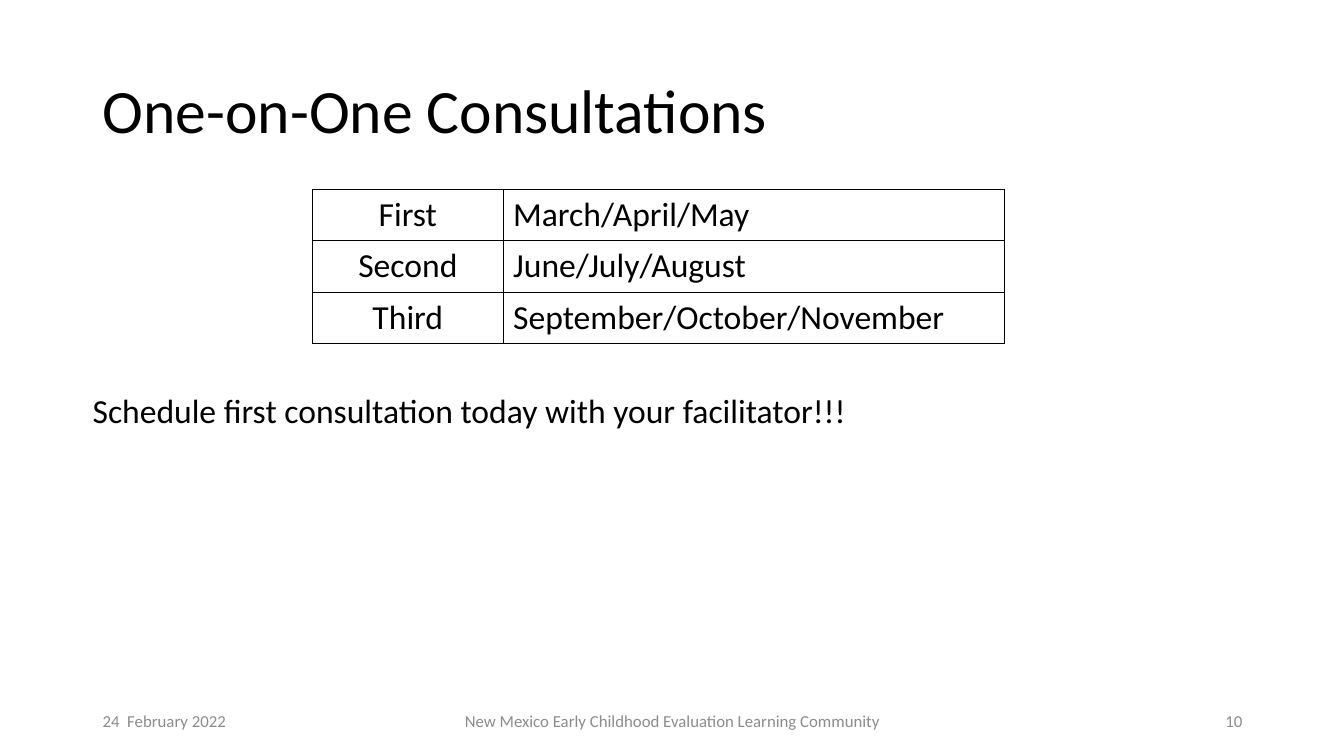
from pptx import Presentation
from pptx.dml.color import RGBColor
from pptx.enum.text import MSO_ANCHOR as Anchor, MSO_AUTO_SIZE as AutoSize, PP_ALIGN as Align
from pptx.oxml import parse_xml
from pptx.oxml.ns import nsdecls
from pptx.util import Inches, Pt

FONT = "Calibri"
BLACK = "000000"
GRAY = "8C8C8C"
CONSULTATIONS = [
    ("First", "March/April/May"),
    ("Second", "June/July/August"),
    ("Third", "September/October/November"),
]


def color(hex_code):
    return RGBColor.from_string(hex_code)


def write(frame, text, size, hex_code=BLACK, align=Align.LEFT):
    para = frame.paragraphs[0]
    para.alignment = align
    span = para.add_run()
    span.text = text
    span.font.name = FONT
    span.font.size = Pt(size)
    span.font.color.rgb = color(hex_code)
    return para


def add_title(page, text, left, top, width, height):
    title = page.shapes.title
    title.left, title.top = Inches(left), Inches(top)
    title.width, title.height = Inches(width), Inches(height)
    title.text_frame.vertical_anchor = Anchor.MIDDLE
    write(title.text_frame, text, 44).line_spacing = 0.9


def add_text(page, text, left, top, width, height, size, hex_code=BLACK,
             align=Align.LEFT, anchor=Anchor.TOP):
    box = page.shapes.add_textbox(Inches(left), Inches(top), Inches(width), Inches(height))
    frame = box.text_frame
    frame.word_wrap = True
    frame.vertical_anchor = anchor
    write(frame, text, size, hex_code, align)
    return frame


def add_borders(cell):
    properties = cell._tc.get_or_add_tcPr()
    for position, side in enumerate(("lnL", "lnR", "lnT", "lnB")):
        properties.insert(position, parse_xml(
            f'<a:{side} {nsdecls("a")} w="{Pt(1)}"><a:solidFill>'
            f'<a:srgbClr val="{BLACK}"/></a:solidFill></a:{side}>'))


def add_schedule(page, left, top, column_widths, row_height):
    table = page.shapes.add_table(
        len(CONSULTATIONS), len(column_widths), Inches(left), Inches(top),
        Inches(sum(column_widths)), Inches(row_height * len(CONSULTATIONS))).table
    table.first_row = False
    table.horz_banding = False
    for column, width in zip(table.columns, column_widths):
        column.width = Inches(width)
    for row, texts in zip(table.rows, CONSULTATIONS):
        row.height = Inches(row_height)
        for cell, text, align in zip(row.cells, texts, (Align.CENTER, Align.LEFT)):
            cell.fill.background()
            add_borders(cell)
            write(cell.text_frame, text, 24, align=align)


def add_footer(page, left, top, width, height):
    """Place date, community name and page number at left, centre and right."""
    side, middle = 3, 4.5
    parts = [
        ("24  February 2022", left, side, Align.LEFT),
        ("New Mexico Early Childhood Evaluation Learning Community",
         left + (width - middle) / 2, middle, Align.CENTER),
        ("10", left + width - side, side, Align.RIGHT),
    ]
    for text, part_left, part_width, align in parts:
        add_text(page, text, part_left, top, part_width, height, 12, GRAY,
                 align, Anchor.MIDDLE)


def main():
    deck = Presentation()
    deck.slide_width, deck.slide_height = Inches(13.33), Inches(7.5)
    page = deck.slides.add_slide(deck.slide_layouts.get_by_name("Title Only"))
    add_title(page, "One-on-One Consultations", 0.92, 0.4, 11.5, 1.45)
    add_footer(page, 0.92, 6.95, 11.5, 0.4)
    add_schedule(page, 3.1, 1.88, (1.89, 4.97), 0.51)
    reminder = add_text(page, "Schedule first consultation today with your facilitator!!!",
                        0.82, 3.82, 7.7, 0.5, 24)
    reminder.auto_size = AutoSize.SHAPE_TO_FIT_TEXT
    deck.save("out.pptx")


if __name__ == "__main__":
    main()
